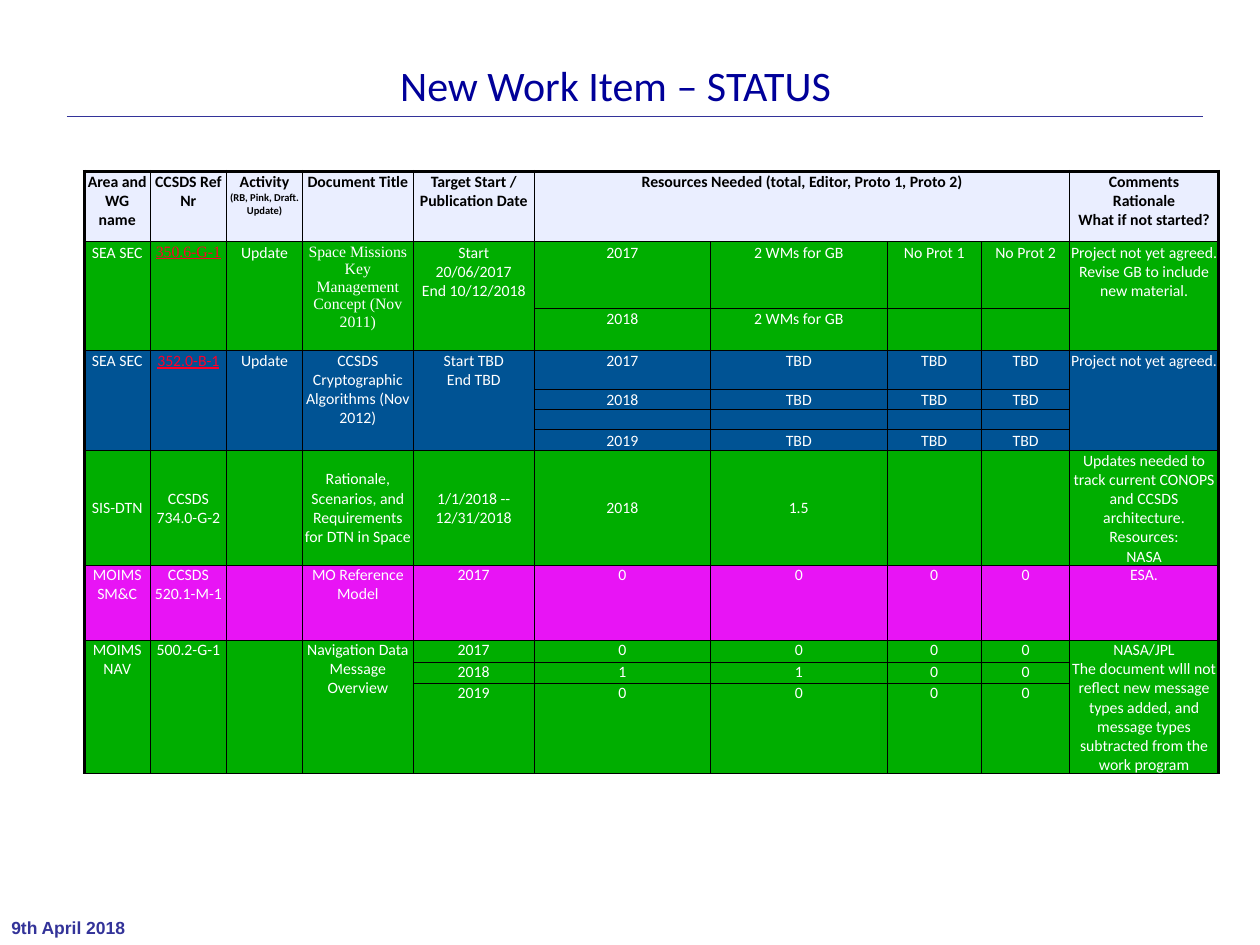
import pptx
import pptx.util
import pptx.dml.color
import pptx.enum.shapes
import pptx.enum.text
import pptx.oxml
import pptx.oxml.ns
import copy

Inches = pptx.util.Inches
Pt = pptx.util.Pt
RGBColor = pptx.dml.color.RGBColor
CENTER = pptx.enum.text.PP_ALIGN.CENTER
MIDDLE = pptx.enum.text.MSO_ANCHOR.MIDDLE
TOP = pptx.enum.text.MSO_ANCHOR.TOP
NS = 'xmlns:a="http://schemas.openxmlformats.org/drawingml/2006/main"'

BLACK = RGBColor(0x00, 0x00, 0x00)
WHITE = RGBColor(0xFF, 0xFF, 0xFF)
PALE = RGBColor(0xEA, 0xEE, 0xFF)
GREEN = RGBColor(0x00, 0xAE, 0x00)
BLUE = RGBColor(0x00, 0x53, 0x94)
PINK = RGBColor(0xE8, 0x14, 0xF5)
RED = RGBColor(0xFC, 0x01, 0x28)
NAVY = RGBColor(0x00, 0x00, 0x99)
INDIGO = RGBColor(0x33, 0x33, 0x99)

TIMES = {"name": "Times New Roman"}
LINK = {"color": RED, "underline": True}
COLS = [0.52, 0.61, 0.6, 0.88, 0.96, 1.4, 1.4, 0.75, 0.7, 1.18]
ROWS = [0.56, 0.53, 0.33, 0.17, 0.16, 0.16, 0.13, 0.84, 0.6, 0.17, 0.17, 0.17]
FILLS = [PALE] + [GREEN] * 2 + [BLUE] * 4 + [GREEN, PINK] + [GREEN] * 3
DTN, MOIMS = 7, 8
SPANS = [(0, 5, 0, 8)]
for first, last, ends in ((1, 2, 5), (3, 6, 5), (9, 11, 4)):
    SPANS += [(first, col, last, col) for col in [*range(ends), 9]]

GAP = [""] * 5
CELLS = [
    ["Area and WG name", "CCSDS Ref Nr",
     [("Activity\n", {}), ("(RB, Pink, Draft. Update)", {"size": Pt(6)})],
     "Document Title", "Target Start / Publication Date",
     "Resources Needed (total, Editor, Proto 1, Proto 2)\n", "", "", "",
     "Comments\nRationale\nWhat if not started?"],
    ["SEA SEC", [("350.6-G-1", TIMES | LINK)], "Update",
     [("Space Missions Key Management Concept (Nov 2011)", TIMES)],
     "Start\n20/06/2017\nEnd 10/12/2018",
     "2017\n", "2 WMs for GB\n", "No Prot 1\n", "No Prot 2\n",
     "Project not yet agreed. Revise GB to include new material."],
    GAP + ["2018", "2 WMs for GB", "", "", ""],
    ["SEA SEC", [("352.0-B-1", LINK)], "Update",
     "CCSDS Cryptographic Algorithms (Nov 2012)", "Start TBD\nEnd TBD",
     "2017\n", "TBD", "TBD", "TBD", "Project not yet agreed."],
    GAP + ["2018", "TBD", "TBD", "TBD", ""],
    GAP + GAP,
    GAP + ["2019", "TBD", "TBD", "TBD", ""],
    ["SIS-DTN", "CCSDS 734.0-G-2", "",
     "Rationale, Scenarios, and Requirements for DTN in Space",
     "1/1/2018 -- 12/31/2018", "2018", "1.5", "", "",
     "Updates needed to track current CONOPS and CCSDS architecture."
     "|Resources:|NASA"],
    ["MOIMS SM&C", "CCSDS 520.1-M-1", "", "MO Reference Model",
     "2017", "0", "0", "0", "0", "ESA."],
    ["MOIMS NAV", "500.2-G-1", "", "Navigation Data Message Overview",
     "2017", "0", "0", "0", "0",
     "NASA/JPL|The document wlll not reflect new message types added, "
     "and message types subtracted from the work program"],
    GAP[1:] + ["2018", "1", "1", "0", "0", ""],
    GAP[1:] + ["2019", "0", "0", "0", "0", ""],
]


def put(item, vals):
    """Set each attribute named in vals on the item."""
    for key, val in vals.items():
        if key == "color":
            item.color.rgb = val
        else:
            setattr(item, key, val)


def write(para, runs, base):
    """Write formatted runs, with line breaks, into a centred paragraph."""
    para.alignment = CENTER
    for text, extra in runs:
        for num, part in enumerate(text.split("\n")):
            if num:
                para.add_line_break()
                mark = para._p.findall(pptx.oxml.ns.qn("a:br"))[-1]
                mark.append(copy.deepcopy(run._r.rPr))
            if part:
                run = para.add_run()
                run.text = part
                put(run.font, base | extra)
    para._p.get_or_add_endParaRPr().set("sz", str(int(base["size"].pt * 100)))


def edge(cell, row, col):
    """Draw the cell borders, heavy on the left, top and right of the grid."""
    heavy = {"L": col == 0, "R": col == len(COLS) - 1, "T": row == 0, "B": False}
    props = cell._tc.get_or_add_tcPr()
    for side, thick in heavy.items():
        width = Pt(2 if thick else 0.5)
        props.append(pptx.oxml.parse_xml(
            f'<a:ln{side} {NS} w="{width}"><a:solidFill>'
            f'<a:srgbClr val="{BLACK}"/></a:solidFill></a:ln{side}>'))


def fill(cell, row, col):
    """Style one cell and write its text."""
    pad = Inches(0 if row >= MOIMS else 0.01)
    mid = row == DTN and col < len(COLS) - 1
    put(cell, {"margin_left": pad, "margin_right": pad, "margin_top": pad,
               "margin_bottom": 0, "vertical_anchor": MIDDLE if mid else TOP})
    edge(cell, row, col)
    cell.fill.solid()
    cell.fill.fore_color.rgb = FILLS[row]
    base = {"name": "Calibri", "size": Pt(9), "bold": row == 0,
            "color": WHITE if row else BLACK}
    text = CELLS[row][col]
    paras = [text] if isinstance(text, list) else [
        [(part, {})] for part in text.split("|")]
    for num, runs in enumerate(paras):
        frame = cell.text_frame
        write(frame.add_paragraph() if num else frame.paragraphs[0], runs, base)


def grid(slide, left, top, width, height):
    """Place the table of work items."""
    frame = slide.shapes.add_table(len(ROWS), len(COLS), left, top, width, height)
    table = frame.table
    put(table, {"first_row": False, "horz_banding": False})
    for col, size in zip(table.columns, COLS):
        col.width = Inches(size)
    for row, size in zip(table.rows, ROWS):
        row.height = Inches(size)
    for row in range(len(ROWS)):
        for col in range(len(COLS)):
            fill(table.cell(row, col), row, col)
    for top_row, start, end_row, stop in SPANS:
        table.cell(top_row, start).merge(table.cell(end_row, stop))
    frame.height = height


def label(slide, left, top, width, height, text, font, frame):
    """Place one line of text in a box."""
    box = slide.shapes.add_textbox(left, top, width, height).text_frame
    put(box, {"word_wrap": False} | frame)
    run = box.paragraphs[0].add_run()
    run.text = text
    put(run.font, font)
    return box.paragraphs[0]


def head(slide, left, top, width, height):
    """Place the title with the rule below it."""
    para = label(slide, left + Inches(2.04), top, Inches(4.23), height,
                 "New Work Item – STATUS",
                 {"name": "Calibri", "size": Pt(24), "color": NAVY},
                 {"margin_left": Inches(0.5)})
    para.alignment = CENTER
    base = top + height
    rule = slide.shapes.add_connector(
        pptx.enum.shapes.MSO_CONNECTOR.STRAIGHT, left, base, left + width, base)
    put(rule.line, {"color": INDIGO, "width": Pt(0.13)})
    rule._element.spPr.append(pptx.oxml.parse_xml(f"<a:effectLst {NS}/>"))


def foot(slide, left, top, width, height):
    """Place the date at the bottom."""
    label(slide, left, top, width, height, "9th April 2018",
          {"name": "Arial", "size": Pt(10), "bold": True, "color": INDIGO},
          {"margin_left": Inches(0.09), "margin_right": Inches(0.09),
           "margin_top": Inches(0.04), "margin_bottom": Inches(0.04)})


def main():
    """Build and save the slide."""
    deck = pptx.Presentation()
    put(deck, {"slide_width": Inches(10), "slide_height": Inches(7.5)})
    slide = deck.slides.add_slide(deck.slide_layouts[6])
    head(slide, Inches(0.53), Inches(0.42), Inches(9.02), Inches(0.5))
    grid(slide, Inches(0.67), Inches(1.36), Inches(9), Inches(4.78))
    foot(slide, Inches(0), Inches(7.24), Inches(1.1), Inches(0.26))
    deck.save("out.pptx")


if __name__ == "__main__":
    main()
